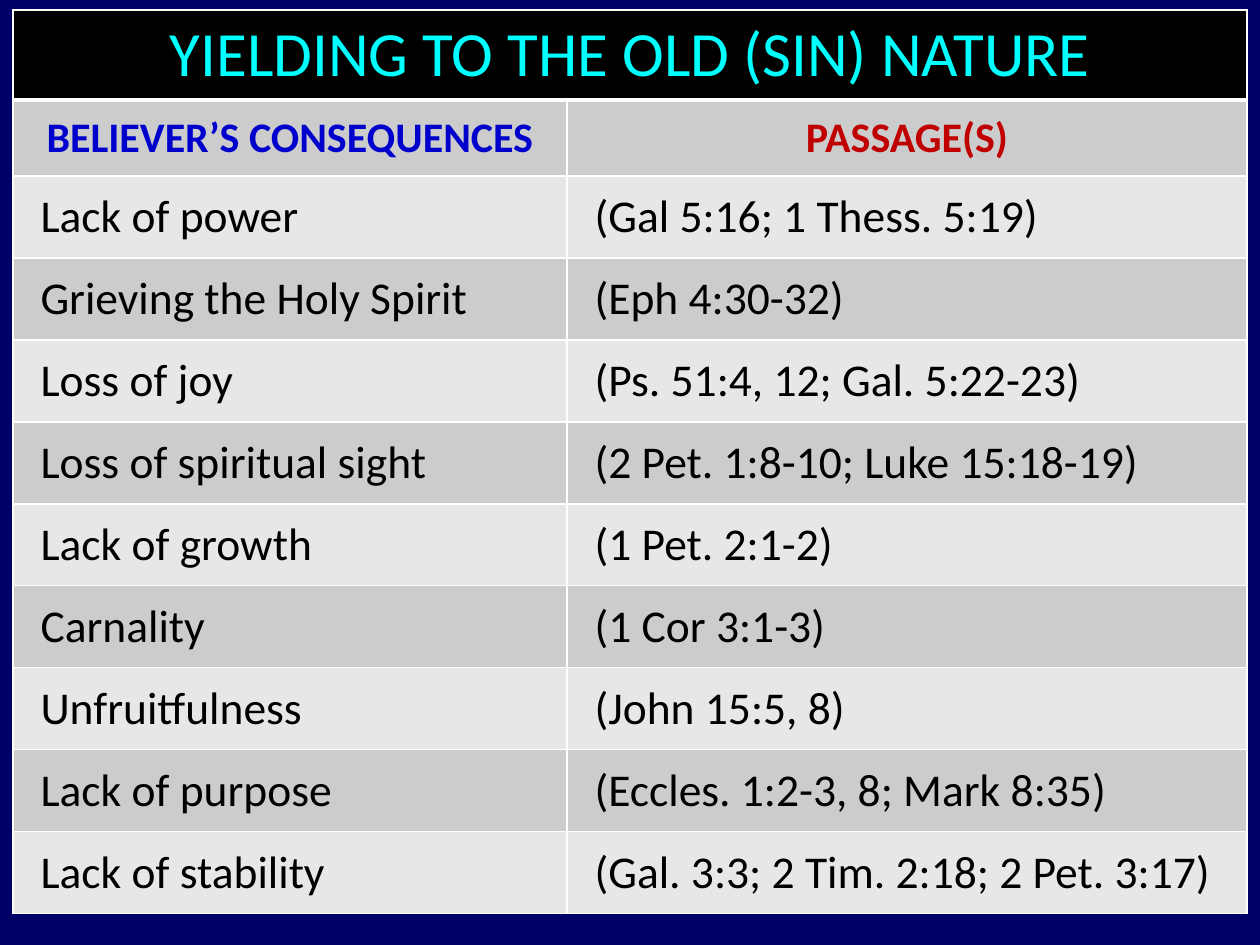
import pptx
import pptx.dml.color
import pptx.enum.text
import pptx.oxml
import pptx.oxml.ns
import pptx.util

TITLE = "YIELDING TO THE OLD (SIN) NATURE"
HEADINGS = ("BELIEVER’S CONSEQUENCES", "PASSAGE(S)")
CONSEQUENCES = [
    ("Lack of power", "(Gal 5:16; 1 Thess. 5:19)"),
    ("Grieving the Holy Spirit", "(Eph 4:30-32)"),
    ("Loss of joy", "(Ps. 51:4, 12; Gal. 5:22-23)"),
    ("Loss of spiritual sight", "(2 Pet. 1:8-10; Luke 15:18-19)"),
    ("Lack of growth", "(1 Pet. 2:1-2)"),
    ("Carnality", "(1 Cor 3:1-3)"),
    ("Unfruitfulness", "(John 15:5, 8)"),
    ("Lack of purpose", "(Eccles. 1:2-3, 8; Mark 8:35)"),
    ("Lack of stability", "(Gal. 3:3; 2 Tim. 2:18; 2 Pet. 3:17)"),
]

THEME = {
    "font": "Calibri",
    "background": "000066",
    "border": "FFFFFF",
    "title_fill": "000000",
    "bands": ("CCCCCC", "E7E7E7"),
    "title": {"size": 36, "color": "00FFFF", "bold": False},
    "headings": (
        {"size": 24, "color": "0000CC", "bold": True},
        {"size": 24, "color": "C00000", "bold": True},
    ),
    "body": {"size": 26, "color": "000000", "bold": False},
}

PX = 914400 // 126
PAGE_WIDTH, PAGE_HEIGHT = 1260, 945
LEFT, TOP = 13, 10
COLUMN_WIDTHS = [554, 680]
ROW_HEIGHTS = [90, 76] + [82] * len(CONSEQUENCES)
BODY_INDENT = 15

CENTER = pptx.enum.text.PP_ALIGN.CENTER
START = pptx.enum.text.PP_ALIGN.LEFT


def rgb(value):
    return pptx.dml.color.RGBColor.from_string(value)


def add_borders(cell, bottom):
    properties = cell._tc.get_or_add_tcPr()
    for side, points in {"L": 1, "R": 1, "T": 1, "B": bottom}.items():
        properties.append(pptx.oxml.parse_xml(
            f'<a:ln{side} {pptx.oxml.ns.nsdecls("a")} w="{pptx.util.Pt(points)}">'
            f'<a:solidFill><a:srgbClr val="{THEME["border"]}"/></a:solidFill>'
            f'</a:ln{side}>'
        ))


def fill_cell(cell, text, style, fill, align=CENTER, indent=0, bottom=1):
    add_borders(cell, bottom)
    cell.fill.solid()
    cell.fill.fore_color.rgb = rgb(fill)
    cell.vertical_anchor = pptx.enum.text.MSO_ANCHOR.MIDDLE
    para = cell.text_frame.paragraphs[0]
    para.alignment = align
    if indent:
        para._p.get_or_add_pPr().set("marL", str(indent * PX))
    span = para.add_run()
    span.text = text
    font_values = {
        "name": THEME["font"],
        "size": pptx.util.Pt(style["size"]),
        "bold": style["bold"],
    }
    for name, value in font_values.items():
        setattr(span.font, name, value)
    span.font.color.rgb = rgb(style["color"])


def main():
    deck = pptx.Presentation()
    deck.slide_width = PAGE_WIDTH * PX
    deck.slide_height = PAGE_HEIGHT * PX
    page = deck.slides.add_slide(deck.slide_layouts[6])
    page.background.fill.solid()
    page.background.fill.fore_color.rgb = rgb(THEME["background"])

    table = page.shapes.add_table(
        len(ROW_HEIGHTS), len(COLUMN_WIDTHS), LEFT * PX, TOP * PX,
        sum(COLUMN_WIDTHS) * PX, sum(ROW_HEIGHTS) * PX,
    ).table
    for column, width in zip(table.columns, COLUMN_WIDTHS):
        column.width = width * PX
    for row, height in zip(table.rows, ROW_HEIGHTS):
        row.height = height * PX

    table.cell(0, 0).merge(table.cell(0, 1))
    fill_cell(table.cell(0, 0), TITLE, THEME["title"], THEME["title_fill"], bottom=3)
    for column, (text, style) in enumerate(zip(HEADINGS, THEME["headings"])):
        fill_cell(table.cell(1, column), text, style, THEME["bands"][0])
    for row, texts in enumerate(CONSEQUENCES, start=2):
        band = THEME["bands"][(row - 1) % 2]
        for column, text in enumerate(texts):
            fill_cell(table.cell(row, column), text, THEME["body"], band,
                      START, BODY_INDENT)

    deck.save("out.pptx")


if __name__ == "__main__":
    main()
